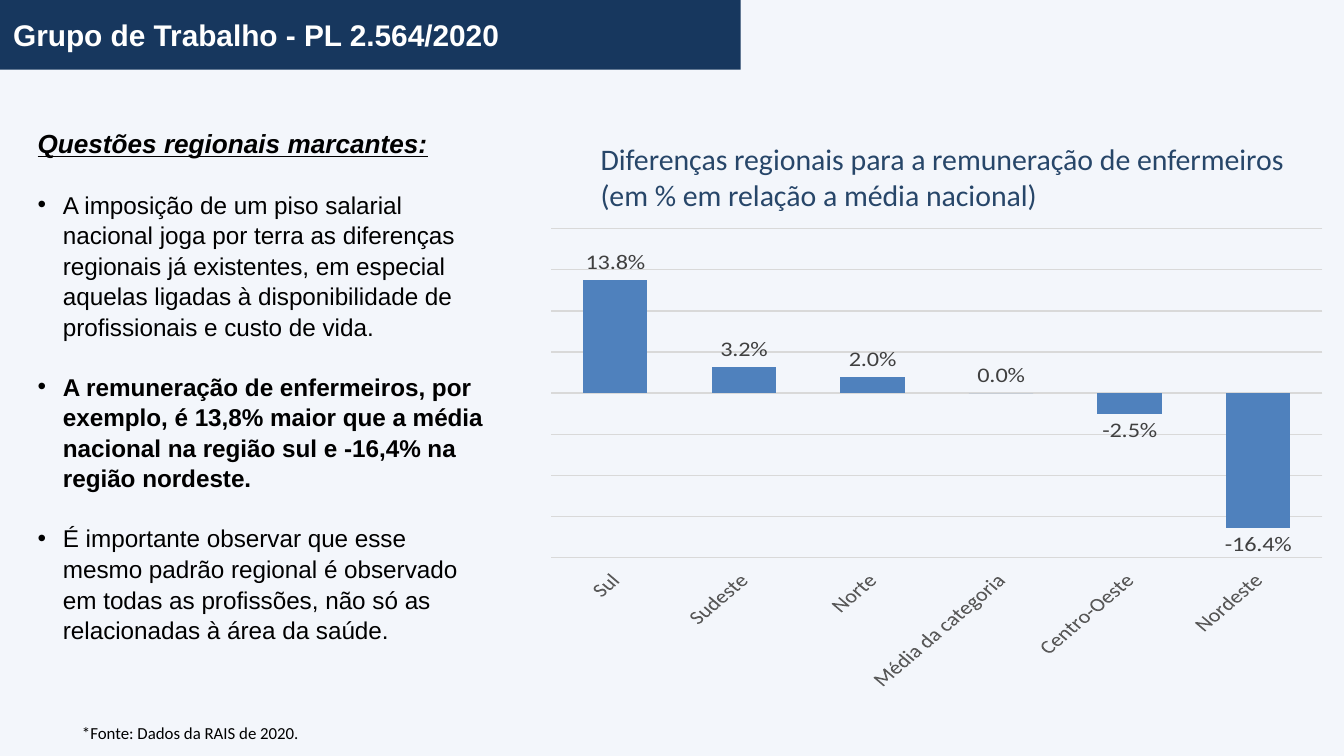
"""Build the slide on regional pay differences for nurses."""
from dataclasses import dataclass, field

from lxml import etree
from pptx import Presentation
from pptx.chart.data import CategoryChartData
from pptx.dml.color import RGBColor
from pptx.enum.chart import XL_CHART_TYPE, XL_LABEL_POSITION, XL_TICK_LABEL_POSITION, XL_TICK_MARK
from pptx.enum.shapes import MSO_SHAPE
from pptx.enum.text import MSO_AUTO_SIZE
from pptx.oxml.ns import qn
from pptx.util import Cm, Pt

COLUMNS = XL_CHART_TYPE.COLUMN_CLUSTERED
OUTSIDE = XL_LABEL_POSITION.OUTSIDE_END
LOW = XL_TICK_LABEL_POSITION.LOW
NO_TICK = XL_TICK_MARK.NONE
RECTANGLE = MSO_SHAPE.RECTANGLE
NO_AUTOFIT = MSO_AUTO_SIZE.NONE


@dataclass(frozen=True)
class Theme:
    background: str = "F3F6FB"
    banner: str = "17375E"
    chart_title: str = "274669"
    bar: str = "4F81BD"
    grid: str = "D9D9D9"
    label: str = "404040"
    axis: str = "595959"
    white: str = "FFFFFF"
    black: str = "000000"
    heading_font: str = "Arial"
    chart_font: str = "Calibri"
    title_size: float = 16
    heading_size: float = 14
    body_size: float = 13
    axis_size: float = 12
    note_size: float = 9


THEME = Theme()


@dataclass(frozen=True)
class Line:
    text: str
    format: dict
    color: str = THEME.black
    bulleted: bool = False
    layout: dict = field(default_factory=dict)


@dataclass(frozen=True)
class TextBlock:
    left: float
    top: float
    width: float
    height: float
    lines: list[Line]
    wrap: bool = True


def rgb(value: str) -> RGBColor:
    return RGBColor.from_string(value)


def apply(target: object, values: dict) -> None:
    for name, value in values.items():
        setattr(target, name, value)


def style(font: object, size: float, color: str, name: str) -> None:
    apply(font, {"size": Pt(size), "name": name})
    font.color.rgb = rgb(color)


def add_bullet(para: object) -> None:
    properties = para._p.get_or_add_pPr()
    indent = Cm(0.48)
    apply_indent = {"marL": indent, "indent": -indent}
    for name, value in apply_indent.items():
        properties.set(name, str(int(value)))
    etree.SubElement(properties, qn("a:buFont")).set("typeface", THEME.heading_font)
    etree.SubElement(properties, qn("a:buChar")).set("char", "•")


def add_text(page: object, block: TextBlock) -> None:
    box = page.shapes.add_textbox(Cm(block.left), Cm(block.top), Cm(block.width), Cm(block.height))
    frame = box.text_frame
    apply(frame, {"word_wrap": block.wrap, "auto_size": NO_AUTOFIT})
    for index, line in enumerate(block.lines):
        para = frame.add_paragraph() if index else frame.paragraphs[0]
        apply(para, line.layout)
        if line.bulleted:
            add_bullet(para)
        span = para.add_run()
        span.text = line.text
        apply(span.font, line.format)
        span.font.color.rgb = rgb(line.color)


def add_banner(page: object) -> None:
    banner = page.shapes.add_shape(RECTANGLE, 0, 0, Cm(14), Cm(1.32))
    banner.shadow.inherit = False
    banner.fill.solid()
    banner.fill.fore_color.rgb = rgb(THEME.banner)
    banner.line.fill.background()


def set_plot_area(chart: object, bounds: dict) -> None:
    plot_area = chart._chartSpace.chart.plotArea
    for old in plot_area.findall(qn("c:layout")):
        plot_area.remove(old)
    layout = etree.Element(qn("c:layout"))
    plot_area.insert(0, layout)
    manual = etree.SubElement(layout, qn("c:manualLayout"))
    values = {"layoutTarget": "inner", "xMode": "edge", "yMode": "edge", **bounds}
    for name, value in values.items():
        etree.SubElement(manual, qn(f"c:{name}")).set("val", str(value))


def add_pay_chart(page: object, differences: dict[str, float]) -> None:
    data = CategoryChartData(number_format="0.0%")
    data.categories = list(differences)
    data.add_series("Series 1", list(differences.values()))
    frame = page.shapes.add_chart(COLUMNS, Cm(10.11), Cm(4.17), Cm(15.19), Cm(8.89), data)
    chart = frame.chart
    apply(chart, {"has_legend": False, "has_title": False})
    style(chart.font, THEME.body_size, THEME.black, THEME.chart_font)
    set_plot_area(chart, {"x": 0.02, "y": 0.02, "w": 0.96, "h": 0.82})

    plot = chart.plots[0]
    apply(plot, {"gap_width": 100, "overlap": -100, "vary_by_categories": False, "has_data_labels": True})
    series = plot.series[0]
    series.invert_if_negative = False
    series.format.fill.solid()
    series.format.fill.fore_color.rgb = rgb(THEME.bar)
    labels = plot.data_labels
    apply(labels, {"show_value": True, "number_format": "0.0%", "number_format_is_linked": False, "position": OUTSIDE})
    style(labels.font, THEME.body_size, THEME.label, THEME.chart_font)

    regions = chart.category_axis
    apply(regions, {"tick_label_position": LOW, "major_tick_mark": NO_TICK, "minor_tick_mark": NO_TICK})
    style(regions.tick_labels.font, THEME.axis_size, THEME.axis, THEME.chart_font)
    scale = chart.value_axis
    apply(scale, {"visible": False, "has_major_gridlines": True,
                  "minimum_scale": -0.2, "maximum_scale": 0.2, "major_unit": 0.05})
    for rule in (regions.format.line, scale.major_gridlines.format.line):
        rule.color.rgb = rgb(THEME.grid)
        rule.width = Pt(0.75)


def text_blocks() -> list[TextBlock]:
    banner = {"name": THEME.heading_font, "size": Pt(THEME.title_size), "bold": True}
    title = {"name": THEME.chart_font, "size": Pt(THEME.title_size)}
    note = {"name": THEME.chart_font, "size": Pt(THEME.note_size)}
    heading = {"name": THEME.heading_font, "size": Pt(THEME.heading_size),
               "bold": True, "italic": True, "underline": True}
    body = {"name": THEME.heading_font, "size": Pt(THEME.body_size), "bold": False}
    strong = {**body, "bold": True}
    spacing = {"line_spacing": 1.05}
    item = {**spacing, "space_before": Pt(15.7)}
    points = [
        ("A imposição de um piso salarial nacional joga por terra as diferenças regionais já existentes, "
         "em especial aquelas ligadas à disponibilidade de profissionais e custo de vida.", body),
        ("A remuneração de enfermeiros, por exemplo, é 13,8% maior que a média nacional "
         "na região sul e -16,4% na região nordeste.", strong),
        ("É importante observar que esse mesmo padrão regional é observado em todas as profissões, "
         "não só as relacionadas à área da saúde.", body),
    ]
    return [
        TextBlock(1.3, 13.54, 20.8, 0.64, [Line("*Fonte: Dados da RAIS de 2020.", note)]),
        TextBlock(11.1, 2.54, 14.6, 1.63, [
            Line("Diferenças regionais para a remuneração de enfermeiros", title, THEME.chart_title),
            Line("(em % em relação a média nacional)", title, THEME.chart_title),
        ]),
        TextBlock(0.46, 2.26, 9.07, 10.82, [
            Line("Questões regionais marcantes:", heading, layout=spacing),
            *(Line(text, weight, bulleted=True, layout=item) for text, weight in points),
        ]),
        TextBlock(0, 0.2, 9.98, 0.94,
                  [Line("Grupo de Trabalho - PL 2.564/2020", banner, THEME.white)], wrap=False),
    ]


def main() -> None:
    deck = Presentation()
    apply(deck, {"slide_width": Cm(25.4), "slide_height": Cm(14.29)})
    page = deck.slides.add_slide(deck.slide_layouts[6])
    page.background.fill.solid()
    page.background.fill.fore_color.rgb = rgb(THEME.background)
    add_banner(page)
    for block in text_blocks():
        add_text(page, block)
    add_pay_chart(page, {"Sul": 0.138, "Sudeste": 0.032, "Norte": 0.02, "Média da categoria": 0,
                         "Centro-Oeste": -0.025, "Nordeste": -0.164})
    deck.save("out.pptx")


if __name__ == "__main__":
    main()
